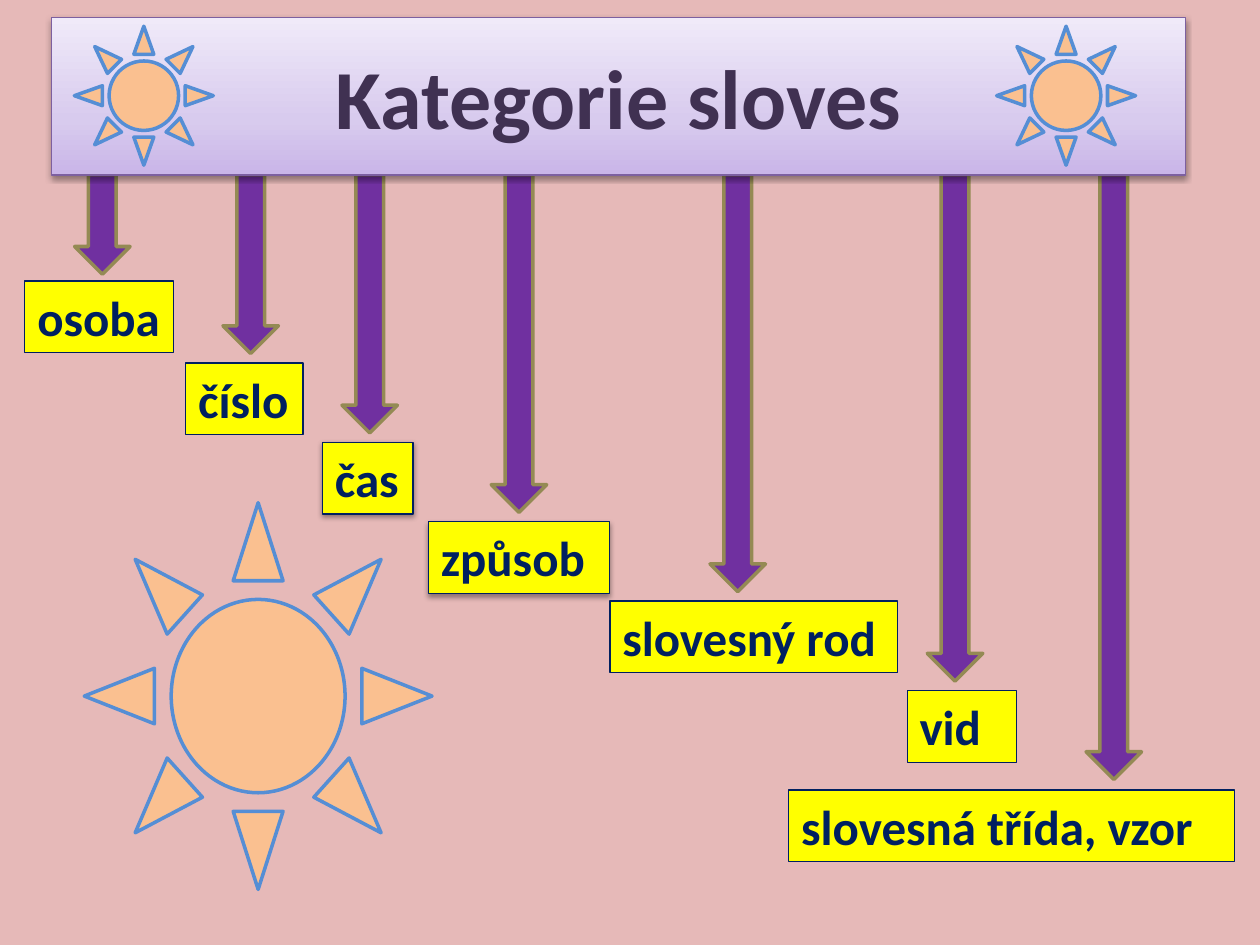
from copy import deepcopy
from dataclasses import dataclass

from lxml.etree import SubElement
from pptx import Presentation
from pptx.dml.color import RGBColor
from pptx.enum.shapes import MSO_SHAPE as Preset
from pptx.enum.text import MSO_ANCHOR as Anchor
from pptx.enum.text import MSO_AUTO_SIZE as AutoSize
from pptx.enum.text import PP_ALIGN as Align
from pptx.oxml.ns import qn
from pptx.shapes.autoshape import Shape
from pptx.slide import Slide
from pptx.util import Pt

FONT = "Calibri"
PINK = RGBColor(0xE6, 0xB9, 0xB8)
YELLOW = RGBColor(0xFF, 0xFF, 0x00)
NAVY = RGBColor(0x00, 0x20, 0x60)
PURPLE = RGBColor(0x70, 0x30, 0xA0)
OLIVE = RGBColor(0x94, 0x8A, 0x54)
PEACH = RGBColor(0xFA, 0xC0, 0x90)
BLUE = RGBColor(0x55, 0x8E, 0xD5)
VIOLET = RGBColor(0x7D, 0x60, 0xA0)
PLUM = RGBColor(0x40, 0x31, 0x52)
BANNER_STOPS = (
    (0, RGBColor(0xC9, 0xB5, 0xE8)),
    (0.35, RGBColor(0xD8, 0xCB, 0xEE)),
    (1, RGBColor(0xF0, 0xEA, 0xF9)),
)

LABEL_HEIGHT = 41.04
ARROW_TOP = 99.8
ARROW_THICKNESS = 31.7


@dataclass
class Frame:
    left: float
    top: float
    width: float
    height: float


@dataclass
class Category:
    name: str
    left: float
    top: float
    width: float
    arrow_center: float
    arrow_length: float
    wrap: bool = True
    shadow: bool = False


CATEGORIES = (
    Category("osoba", 14.2, 160.6, 85, 58.5, 56.9, wrap=False),
    Category("číslo", 106.2, 207.4, 67, 143.3, 102.2, wrap=False),
    Category("čas", 184.3, 252.7, 51.8, 211.3, 147.6, wrap=False, shadow=True),
    Category("způsob", 244.8, 298.1, 103.7, 296.6, 193, shadow=True),
    Category("slovesný rod", 348.5, 343.4, 164.2, 421.6, 238.3),
    Category("vid", 518.4, 394.6, 62.6, 545.8, 289.4),
    Category("slovesná třída, vzor", 450.7, 451.4, 254.9, 636.5, 345.6),
)
BANNER = Frame(29.5, 10, 648, 90)
LARGE_SUN = Frame(48.2, 287.3, 198.7, 221)
SMALL_SUNS = (Frame(569.5, 15, 79.4, 79.4), Frame(42.5, 15, 79.4, 79.4))


def add_outlined(page: Slide, preset: Preset, frame: Frame, fill: RGBColor,
                 line: RGBColor, weight: float) -> Shape:
    shape = page.shapes.add_shape(
        preset, Pt(frame.left), Pt(frame.top), Pt(frame.width), Pt(frame.height))
    shape.shadow.inherit = False
    shape.fill.solid()
    shape.fill.fore_color.rgb = fill
    shape.line.color.rgb = line
    shape.line.width = Pt(weight)
    return shape


def add_shadow(shape: Shape) -> None:
    """Give the shape a soft shadow falling straight down."""
    effects = shape._element.spPr.find(qn("a:effectLst"))
    shadow = SubElement(effects, qn("a:outerShdw"), blurRad=str(Pt(3.1)),
                        dist=str(Pt(1.6)), dir="5400000", rotWithShape="0")
    color = SubElement(shadow, qn("a:srgbClr"), val="000000")
    SubElement(color, qn("a:alpha"), val="38000")


def fill_banner(shape: Shape) -> None:
    """Fill with the three-stop gradient, running from the bottom up."""
    shape.fill.gradient()
    shape.fill.gradient_angle = 90
    stops = shape._element.spPr.find(qn("a:gradFill")).find(qn("a:gsLst"))
    stops.append(deepcopy(stops[0]))
    for stop, (position, color) in zip(shape.fill.gradient_stops, BANNER_STOPS):
        stop.position = position
        stop.color.rgb = color


def write(shape: Shape, text: str, size: float, color: RGBColor, align: Align) -> None:
    para = shape.text_frame.paragraphs[0]
    para.alignment = align
    span = para.add_run()
    span.text = text
    span.font.name = FONT
    span.font.size = Pt(size)
    span.font.bold = True
    span.font.color.rgb = color


def add_label(page: Slide, category: Category) -> None:
    frame = Frame(category.left, category.top, category.width, LABEL_HEIGHT)
    box = add_outlined(page, Preset.RECTANGLE, frame, YELLOW, NAVY, 0.75)
    if category.shadow:
        add_shadow(box)
    box.text_frame.word_wrap = category.wrap
    box.text_frame.auto_size = AutoSize.SHAPE_TO_FIT_TEXT
    box.text_frame.vertical_anchor = Anchor.TOP
    write(box, category.name, 28, NAVY, Align.LEFT)


def add_arrow(page: Slide, category: Category) -> None:
    """Hang a left arrow, turned to point down, from the banner."""
    length = category.arrow_length
    middle = ARROW_TOP + length / 2
    frame = Frame(category.arrow_center - length / 2, middle - ARROW_THICKNESS / 2,
                  length, ARROW_THICKNESS)
    arrow = add_outlined(page, Preset.LEFT_ARROW, frame, PURPLE, OLIVE, 2)
    arrow.rotation = 270


def add_sun(page: Slide, frame: Frame) -> None:
    add_outlined(page, Preset.SUN, frame, PEACH, BLUE, 2)


def add_banner(page: Slide) -> None:
    banner = add_outlined(page, Preset.RECTANGLE, BANNER, YELLOW, VIOLET, 0.75)
    fill_banner(banner)
    add_shadow(banner)
    banner.text_frame.word_wrap = True
    banner.text_frame.vertical_anchor = Anchor.MIDDLE
    write(banner, "Kategorie sloves", 48, PLUM, Align.CENTER)


def main() -> None:
    deck = Presentation()
    deck.slide_width, deck.slide_height = Pt(720), Pt(540)
    page = deck.slides.add_slide(deck.slide_layouts[6])
    page.background.fill.solid()
    page.background.fill.fore_color.rgb = PINK

    for category in CATEGORIES:
        add_label(page, category)
    for category in CATEGORIES:
        add_arrow(page, category)
    add_sun(page, LARGE_SUN)
    add_banner(page)
    for frame in SMALL_SUNS:
        add_sun(page, frame)
    deck.save("out.pptx")


if __name__ == "__main__":
    main()
